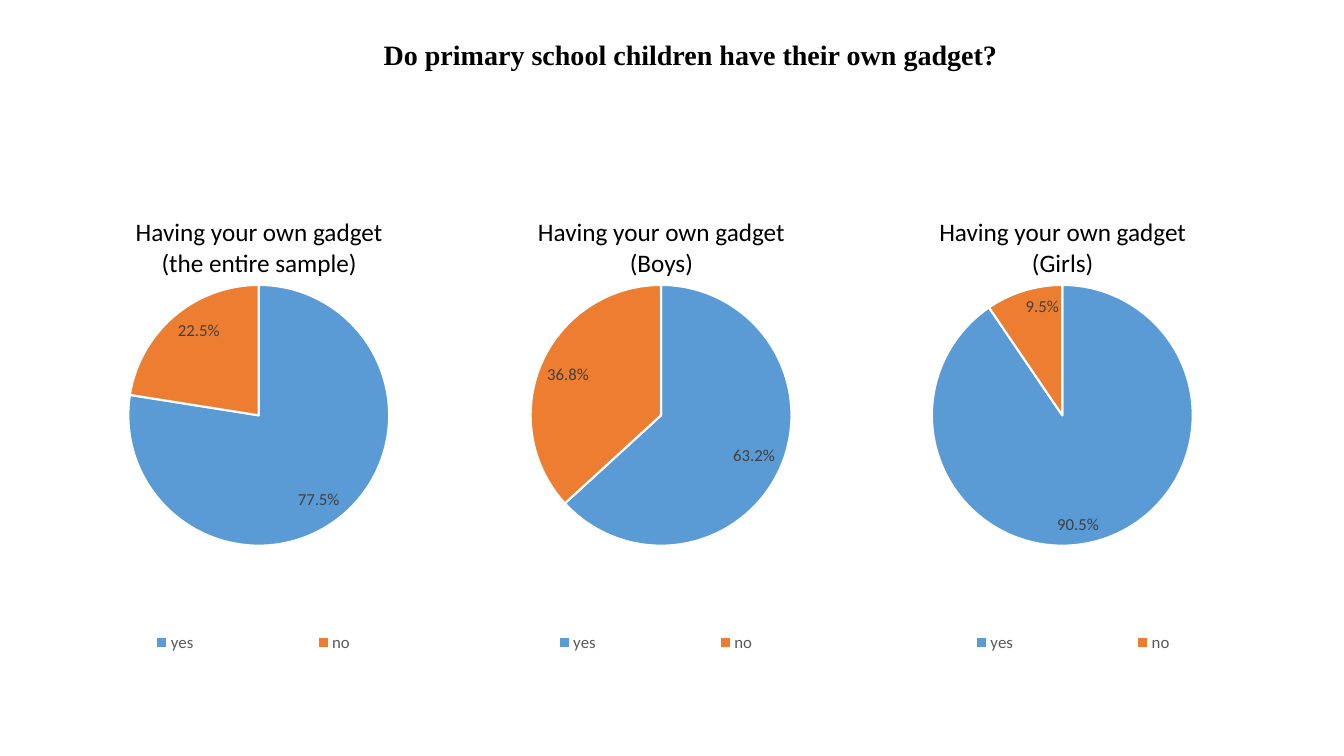
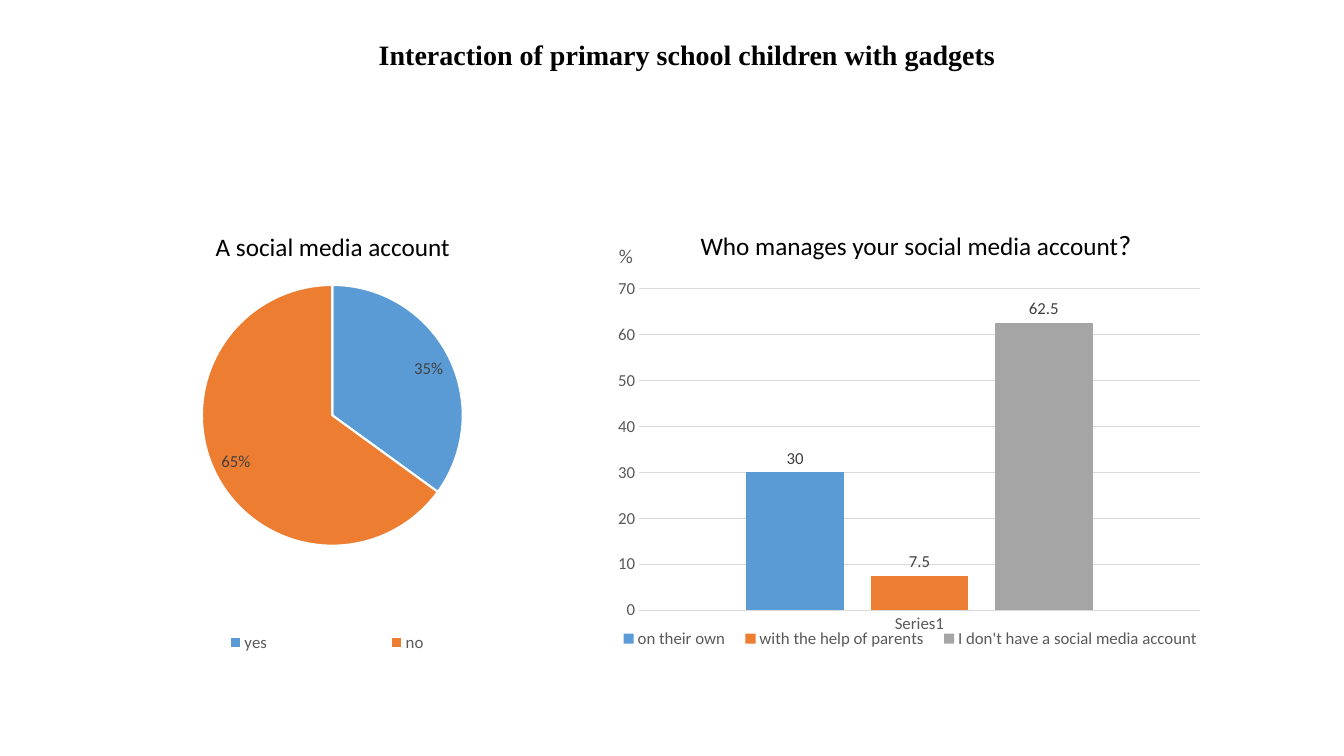
from lxml import etree
from pptx import Presentation
from pptx.chart.data import CategoryChartData
from pptx.dml.color import RGBColor
from pptx.enum.chart import XL_CHART_TYPE, XL_LABEL_POSITION, XL_LEGEND_POSITION, XL_TICK_MARK
from pptx.enum.text import MSO_ANCHOR, PP_ALIGN
from pptx.oxml.ns import qn
from pptx.util import Emu, Pt

PIE = XL_CHART_TYPE.PIE
COLUMN = XL_CHART_TYPE.COLUMN_CLUSTERED
INSIDE_END = XL_LABEL_POSITION.INSIDE_END
OUTSIDE_END = XL_LABEL_POSITION.OUTSIDE_END
BOTTOM = XL_LEGEND_POSITION.BOTTOM
NO_TICK = XL_TICK_MARK.NONE
LEFT = PP_ALIGN.LEFT
CENTER = PP_ALIGN.CENTER
TOP = MSO_ANCHOR.TOP

PX = 9144  # 100 px to the inch
TITLE_ONLY = 5
HEADING_FONT = "Times New Roman"
BODY_FONT = "Calibri"

BLACK = RGBColor(0x00, 0x00, 0x00)
WHITE = RGBColor(0xFF, 0xFF, 0xFF)
BLUE = RGBColor(0x5B, 0x9B, 0xD5)
ORANGE = RGBColor(0xED, 0x7D, 0x31)
GRAY = RGBColor(0xA5, 0xA5, 0xA5)
AXIS_TEXT = RGBColor(0x59, 0x59, 0x59)
LABEL_TEXT = RGBColor(0x40, 0x40, 0x40)
GRID = RGBColor(0xD9, 0xD9, 0xD9)

PIE_TOP = 196
PIE_PLOT = (0.26, 0.17, 0.49, 0.57)
PIE_LEGEND = (0.09, 0.88, 0.81, 0.1)
GIRLS_LEGEND = (0.12, 0.88, 0.81, 0.1)
COLUMN_PLOT = (0.05, 0.05, 0.93, 0.79)
COLUMN_LEGEND = (0, 0.86, 1, 0.1)


def px(*lengths):
    return [Emu(length * PX) for length in lengths]


def style_font(font, size, color, name=BODY_FONT, bold=False):
    font.size, font.name, font.bold = Pt(size), name, bold
    font.color.rgb = color


def add_titled_slide(prs, title):
    slide = prs.slides.add_slide(prs.slide_layouts[TITLE_ONLY])
    heading = slide.shapes.title
    heading.left, heading.top, heading.width, heading.height = px(255, 32, 860, 44)
    frame = heading.text_frame
    frame.text = title
    frame.vertical_anchor = TOP
    paragraph = frame.paragraphs[0]
    paragraph.alignment = CENTER
    style_font(paragraph.font, 20, BLACK, HEADING_FONT, True)
    return slide


def add_text(slide, box, lines, size=18, color=BLACK, alignment=LEFT):
    """Add a text box; centred text stays on its lines, other text wraps."""
    frame = slide.shapes.add_textbox(*px(*box)).text_frame
    frame.word_wrap = alignment != CENTER
    frame.text = "\n".join(lines)
    for paragraph in frame.paragraphs:
        paragraph.alignment = alignment
        style_font(paragraph.font, size, color)
    return frame


def manual_layout(fractions, inner=False):
    """Return a c:layout element for x, y, width and height as chart fractions."""
    layout = etree.Element(qn("c:layout"))
    manual = etree.SubElement(layout, qn("c:manualLayout"))
    settings = [("layoutTarget", "inner")] if inner else []
    settings += [("xMode", "edge"), ("yMode", "edge")]
    settings += zip("xywh", fractions)
    for tag, value in settings:
        etree.SubElement(manual, qn(f"c:{tag}")).set("val", str(value))
    return layout


def add_chart(slide, kind, box, data, plot_area, legend_area):
    chart = slide.shapes.add_chart(kind, *px(*box), data).chart
    chart.has_title = False
    style_font(chart.font, 10, BLACK)

    chart.has_legend = True
    legend = chart.legend
    legend.position = BOTTOM
    legend.include_in_layout = False
    style_font(legend.font, 12, AXIS_TEXT)

    root = chart.element
    for old_layout in root.findall(".//" + qn("c:layout")):
        old_layout.getparent().remove(old_layout)
    root.find(".//" + qn("c:plotArea")).insert(0, manual_layout(plot_area, inner=True))
    root.find(".//" + qn("c:legendPos")).addnext(manual_layout(legend_area))
    return chart


def show_values(plot, position, number_format):
    plot.has_data_labels = True
    labels = plot.data_labels
    labels.show_value = True
    labels.show_percentage = False
    labels.number_format = number_format
    labels.number_format_is_linked = False
    labels.position = position
    style_font(labels.font, 12, LABEL_TEXT)


def fill_solid(part, color):
    part.format.fill.solid()
    part.format.fill.fore_color.rgb = color


def draw_line(line, color, width):
    line.color.rgb = color
    line.width = Pt(width)


def add_yes_no_pie(slide, left, shares, caption, legend_area=PIE_LEGEND):
    data = CategoryChartData()
    data.categories = ["yes", "no"]
    data.add_series("Series 1", shares)
    box = (left, PIE_TOP, 528, 475)
    plot = add_chart(slide, PIE, box, data, PIE_PLOT, legend_area).plots[0]
    plot.vary_by_categories = True
    show_values(plot, INSIDE_END, 'General"%"')
    for index, color in enumerate((BLUE, ORANGE)):
        slice_ = plot.series[0].points[index]
        fill_solid(slice_, color)
        draw_line(slice_.format.line, WHITE, 1.5)
    caption_top = 210 if len(caption) > 1 else 225
    add_text(slide, (left + 133, caption_top, 268, 40), caption, alignment=CENTER)


def add_manager_columns(slide):
    answers = [
        ("on their own", 30, BLUE),
        ("with the help of parents", 7.5, ORANGE),
        ("I don't have a social media account", 62.5, GRAY),
    ]
    data = CategoryChartData()
    data.categories = ["Series1"]
    for answer, share, _ in answers:
        data.add_series(answer, [share])
    box = (604, 266, 598, 404)
    chart = add_chart(slide, COLUMN, box, data, COLUMN_PLOT, COLUMN_LEGEND)
    plot = chart.plots[0]
    plot.vary_by_categories = False
    plot.gap_width, plot.overlap = 219, -27
    show_values(plot, OUTSIDE_END, "General")
    for series, (_, _, color) in zip(plot.series, answers):
        fill_solid(series, color)

    for axis in (chart.category_axis, chart.value_axis):
        axis.major_tick_mark = axis.minor_tick_mark = NO_TICK
        style_font(axis.tick_labels.font, 12, AXIS_TEXT)
    draw_line(chart.category_axis.format.line, GRID, 0.75)
    shares_axis = chart.value_axis
    shares_axis.minimum_scale, shares_axis.maximum_scale = 0, 70
    shares_axis.major_unit = 10
    shares_axis.format.line.fill.background()
    draw_line(shares_axis.major_gridlines.format.line, GRID, 0.75)


def build_ownership_slide(prs):
    slide = add_titled_slide(prs, "Do primary school children have their own gadget?")
    groups = [
        (-10, (77.5, 22.5), "(the entire sample)", PIE_LEGEND),
        (389, (63.2, 36.8), "(Boys)", PIE_LEGEND),
        (787, (90.5, 9.5), "(Girls)", GIRLS_LEGEND),
    ]
    for left, shares, group, legend_area in groups:
        caption = ["Having your own gadget", group]
        add_yes_no_pie(slide, left, shares, caption, legend_area)


def build_account_slide(prs):
    slide = add_titled_slide(prs, "Interaction of primary school children with gadgets ")
    add_yes_no_pie(slide, 63, (35, 65), ["A social media account"])
    question = add_text(slide, (685, 221, 509, 44), ["Who manages your social media account"])
    question_mark = question.paragraphs[0].add_run()
    question_mark.text = "?"
    question_mark.font.size = Pt(20)
    add_manager_columns(slide)
    add_text(slide, (604, 237, 24, 34), ["%"], 14, AXIS_TEXT)


def main():
    prs = Presentation()
    prs.slide_width, prs.slide_height = px(1333, 750)
    build_ownership_slide(prs)
    build_account_slide(prs)
    prs.save("out.pptx")


if __name__ == "__main__":
    main()
